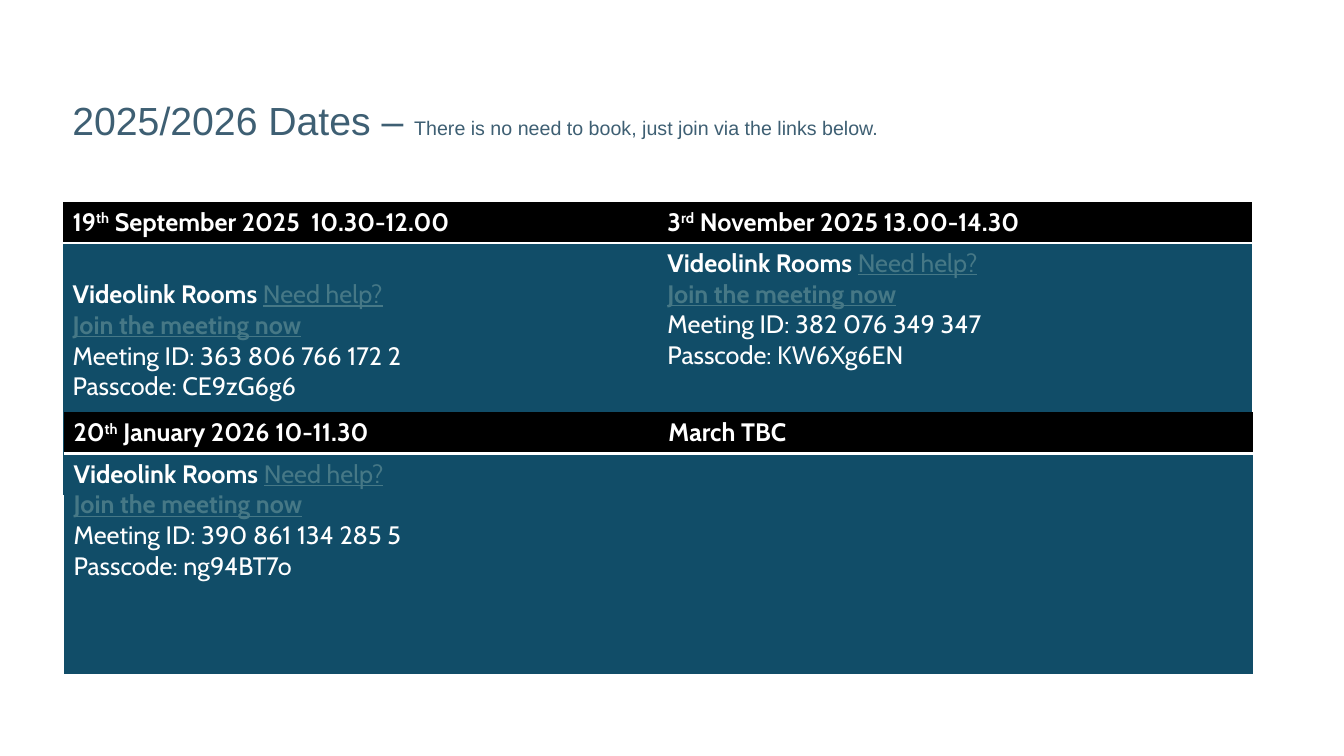
"""Build the slide of meeting dates and joining details."""
from lxml.etree import SubElement
from pptx import Presentation
from pptx.dml.color import RGBColor as RGB
from pptx.enum.text import MSO_ANCHOR as Anchor
from pptx.oxml import parse_xml
from pptx.oxml.ns import nsdecls, qn
from pptx.util import Inches, Pt

WHITE = RGB(0xFF, 0xFF, 0xFF)
BLACK = RGB(0, 0, 0)
TEAL = RGB(0x11, 0x4D, 0x68)
SLATE = RGB(0x3E, 0x5F, 0x73)
LINK = RGB(0x46, 0x78, 0x86)
PLAIN = "{2D5ABB26-0587-4C30-8999-92F81FD0307C}"

TITLE = "2025/2026 Dates – "
NOTE = "There is no need to book, just join via the links below."
TOOL, HELP, JOIN = "Videolink Rooms ", "Need help?", "Join the meeting now"
TABLES = [
    {"left": 0.62, "top": 2, "body": 2.5, "meets": [
        {"date": ("19", "th", " September 2025  10.30-12.00"),
         "id": "363 806 766 172 2", "code": "CE9zG6g6", "drop": 0.36},
        {"date": ("3", "rd", " November 2025 13.00-14.30"),
         "id": "382 076 349 347", "code": "KW6Xg6EN"}]},
    {"left": 0.63, "top": 4.09, "body": 2.19, "meets": [
        {"date": ("20", "th", " January 2026 10-11.30"),
         "id": "390 861 134 285 5", "code": "ng94BT7o"},
        {"date": ("March TBC", "", "")}]},
]
HEAD, COL = 0.41, 5.9


def write(para, text, size=18, face="Cabin", color=WHITE, bold=False,
          under=False, lift=False):
    """Add a formatted run to a paragraph."""
    run = para.add_run()
    run.text = text
    font = run.font
    font.size, font.name, font.bold = Pt(size), face, bold
    font.underline = under
    font.color.rgb = color
    if lift:
        run._r.get_or_add_rPr().set("baseline", "30000")


def paint(cell, color):
    """Fill a cell with one colour."""
    cell.fill.solid()
    cell.fill.fore_color.rgb = color


def rule(cell):
    """Draw a white line under a cell."""
    line = parse_xml(f'<a:lnB {nsdecls("a")} w="{Pt(2)}"/>')
    fill = SubElement(line, qn("a:solidFill"))
    SubElement(fill, qn("a:srgbClr")).set("val", str(WHITE))
    cell._tc.get_or_add_tcPr().insert(0, line)


def detail(cell, meet):
    """Write the joining details of a meeting."""
    cell.margin_top = Inches(meet.get("drop", 0.05))
    frame = cell.text_frame
    para = frame.paragraphs[0]
    write(para, TOOL, bold=True)
    write(para, HELP, color=LINK, under=True)
    write(frame.add_paragraph(), JOIN, color=LINK, bold=True, under=True)
    write(frame.add_paragraph(), "Meeting ID: " + meet["id"])
    write(frame.add_paragraph(), "Passcode: " + meet["code"])


def grid(slide, left, top, body, meets):
    """Add a table with one column for each meeting."""
    table = slide.shapes.add_table(
        2, len(meets), Inches(left), Inches(top),
        Inches(COL * len(meets)), Inches(HEAD + body)).table
    table.first_row = table.horz_banding = False
    table._tbl.tblPr.find(qn("a:tableStyleId")).text = PLAIN
    table.rows[0].height, table.rows[1].height = Inches(HEAD), Inches(body)
    for col, meet in enumerate(meets):
        table.columns[col].width = Inches(COL)
        head, cell = table.cell(0, col), table.cell(1, col)
        paint(head, BLACK)
        paint(cell, TEAL)
        rule(head)
        for spot, part in enumerate(meet["date"]):
            if part:
                write(head.text_frame.paragraphs[0], part, bold=True,
                      lift=spot == 1)
        if "id" in meet:
            detail(cell, meet)


def main():
    """Build and save the slide."""
    deck = Presentation()
    deck.slide_width, deck.slide_height = Inches(13.33), Inches(7.5)
    slide = deck.slides.add_slide(deck.slide_layouts[6])
    for data in TABLES:
        grid(slide, **data)
    frame = slide.shapes.add_textbox(
        Inches(0.62), Inches(0.93), Inches(9.44), Inches(0.57)).text_frame
    frame.word_wrap = True
    frame.vertical_anchor = Anchor.MIDDLE
    para = frame.paragraphs[0]
    para.line_spacing = 0.9
    write(para, TITLE, size=28, face="Arial", color=SLATE)
    write(para, NOTE, size=14, face="Arial", color=SLATE)
    deck.save("out.pptx")


if __name__ == "__main__":
    main()
